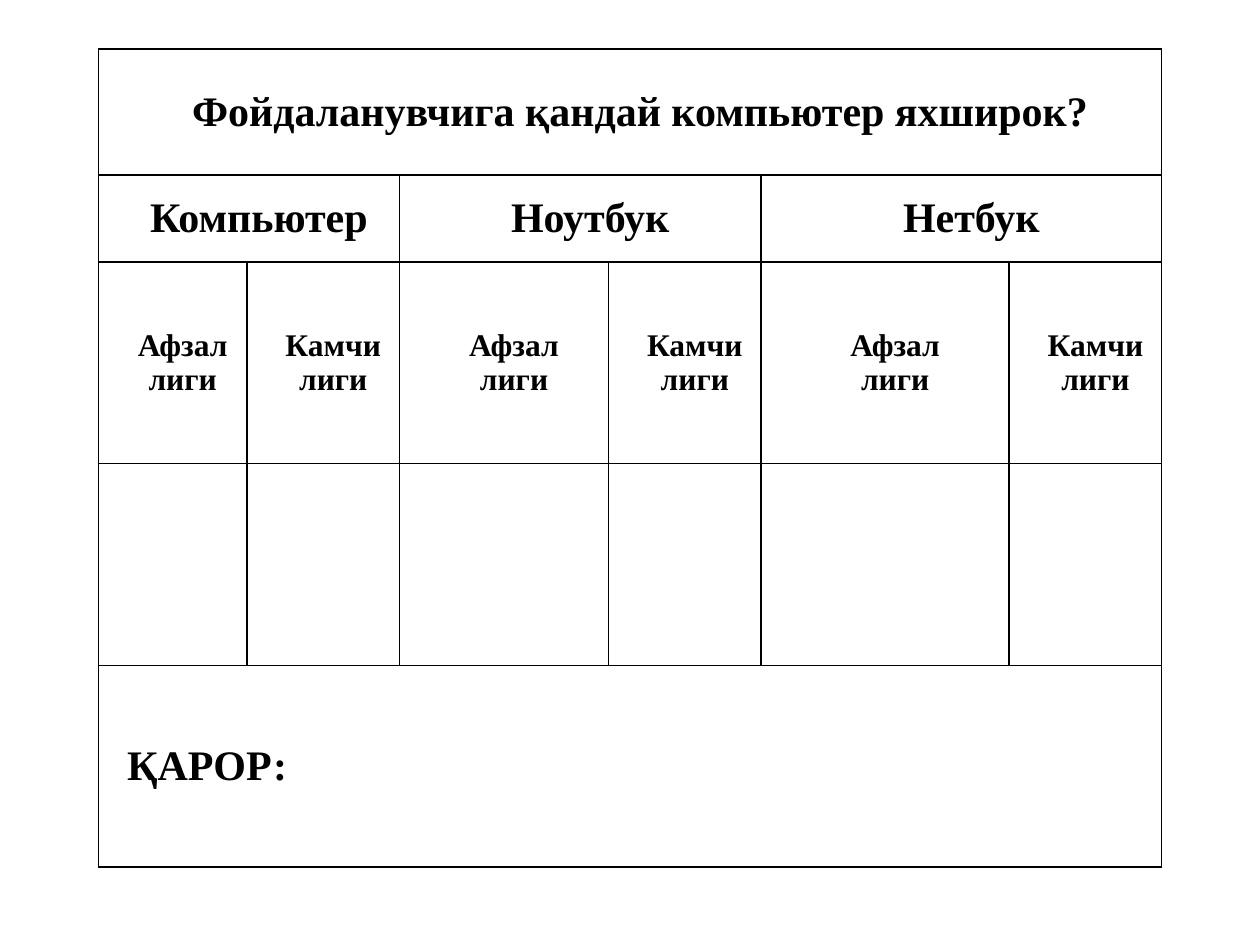
from lxml import etree
from pptx import Presentation
from pptx.dml.color import RGBColor
from pptx.enum.text import MSO_ANCHOR, PP_ALIGN
from pptx.oxml.ns import qn
from pptx.util import Inches, Pt

BLACK = RGBColor(0, 0, 0)
MIDDLE = MSO_ANCHOR.MIDDLE
CENTER = PP_ALIGN.CENTER
JUSTIFY = PP_ALIGN.JUSTIFY
FONT = "Times New Roman"

TITLE = "Фойдаланувчига қандай компьютер яхширок?"
KINDS = ["Компьютер", "Ноутбук", "Нетбук"]
SIDES = ["Афзал\nлиги", "Камчи\nлиги"]
RESULT = "ҚАРОР: "
WIDTHS = [1.18, 1.21, 1.66, 1.21, 1.97, 1.21]
HEIGHTS = [1, 0.69, 1.6, 1.6, 1.6]
LEFT, TOP = 0.78, 0.39


def border(cell):
    props = cell._tc.get_or_add_tcPr()
    for place, side in enumerate(("lnL", "lnR", "lnT", "lnB")):
        line = etree.Element(qn(f"a:{side}"), w=str(Pt(1)))
        fill = etree.SubElement(line, qn("a:solidFill"))
        etree.SubElement(fill, qn("a:srgbClr"), val=str(BLACK))
        props.insert(place, line)


def write(row, col, text, size, span=1, align=CENTER):
    cell = table.cell(row, col)
    if span > 1:
        cell.merge(table.cell(row, col + span - 1))
    cell.text_frame.text = text
    for para in cell.text_frame.paragraphs:
        para.alignment = align
        para._p.get_or_add_pPr().set("indent", str(Inches(0.16)))
        for run in para.runs:
            font = run.font
            font.name, font.size, font.bold = FONT, Pt(size), True
            font.color.rgb = BLACK


deck = Presentation()
deck.slide_width, deck.slide_height = Inches(10), Inches(7.5)
slide = deck.slides.add_slide(deck.slide_layouts[6])
table = slide.shapes.add_table(
    len(HEIGHTS), len(WIDTHS), Inches(LEFT), Inches(TOP),
    Inches(sum(WIDTHS)), Inches(sum(HEIGHTS))).table
table.first_row = table.horz_banding = False
for col, width in zip(table.columns, WIDTHS):
    col.width = Inches(width)
for row, height in zip(table.rows, HEIGHTS):
    row.height = Inches(height)

for cell in table.iter_cells():
    cell.fill.background()
    cell.vertical_anchor = MIDDLE
    cell.margin_left = cell.margin_right = Inches(0.07)
    cell.margin_top = cell.margin_bottom = 0
    border(cell)

write(0, 0, TITLE, 24, len(WIDTHS))
for i, kind in enumerate(KINDS):
    write(1, 2 * i, kind, 24, 2)
    for j, side in enumerate(SIDES):
        write(2, 2 * i + j, side, 18)
write(4, 0, RESULT, 24, len(WIDTHS), JUSTIFY)

deck.save("out.pptx")
